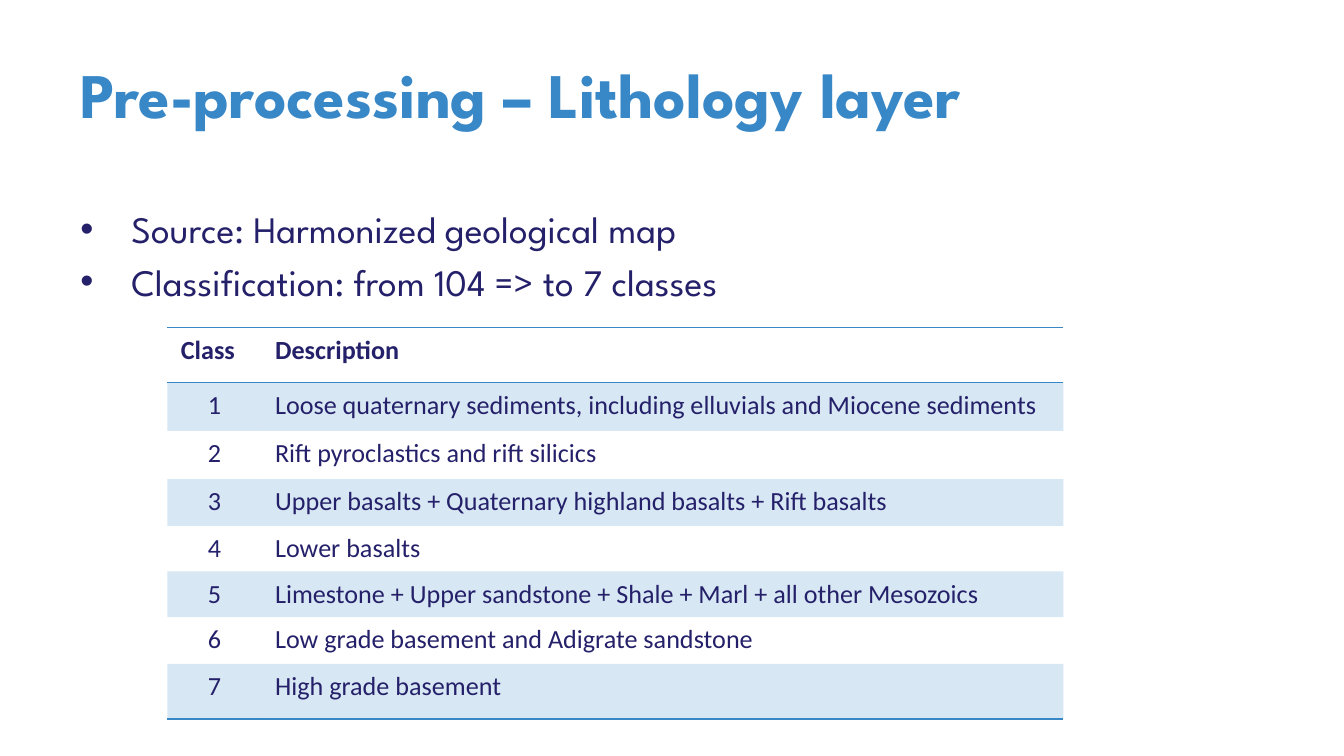
from dataclasses import dataclass

from lxml import etree
from pptx import Presentation
from pptx.dml.color import RGBColor
from pptx.enum.text import MSO_ANCHOR, PP_ALIGN
from pptx.oxml.ns import qn
from pptx.util import Inches, Pt

MIDDLE, TOP = MSO_ANCHOR.MIDDLE, MSO_ANCHOR.TOP
LEFT, CENTER = PP_ALIGN.LEFT, PP_ALIGN.CENTER
SLIDE_W = Inches(10)
SLIDE_H = SLIDE_W * 9 // 16
GRID_COLS, GRID_ROWS = 80, 45
PLAIN_TABLE = "{2D5ABB26-0587-4C30-8999-92F81FD0307C}"


@dataclass(frozen=True)
class Theme:
    """Colours, fonts and type sizes of the slide."""
    accent: str = "3887C7"
    ink: str = "242069"
    display: str = "League Spartan"
    table_font: str = "Calibri"
    title: int = 34
    body: int = 20
    cell: int = 14
    band_alpha: int = 20
    rule: int = 1


THEME = Theme()
TITLE = "Pre-processing – Lithology layer"
BULLETS = ["Source: Harmonized geological map",
           "Classification: from 104 => to 7 classes"]
HEADER = ("Class", "Description")
CLASSES = [
    "Loose quaternary sediments, including elluvials and Miocene sediments",
    "Rift pyroclastics and rift silicics",
    "Upper basalts + Quaternary highland basalts + Rift basalts",
    "Lower basalts",
    "Limestone + Upper sandstone + Shale + Marl + all other Mesozoics",
    "Low grade basement and Adigrate sandstone",
    "High grade basement",
]
COL_WIDTHS = (0.7, 5.96)
ROW_HEIGHTS = (0.41, 0.36, 0.36, 0.35, 0.34, 0.34, 0.35, 0.41)


def grid_box(col, row, cols, rows):
    """Turn grid columns and rows into a box of lengths."""
    col_w, row_h = SLIDE_W / GRID_COLS, SLIDE_H / GRID_ROWS
    return int(col * col_w), int(row * row_h), int(cols * col_w), int(rows * row_h)


def add_run(p, text, size, font, color, bold=False):
    """Append one styled run to a paragraph."""
    r = p.add_run()
    r.text = text
    r.font.size, r.font.name, r.font.bold = Pt(size), font, bold
    r.font.color.rgb = RGBColor.from_string(color)


def add_text_frame(slide, box, anchor):
    """Add a wrapping text box and return its frame."""
    tf = slide.shapes.add_textbox(*box).text_frame
    tf.word_wrap = True
    tf.vertical_anchor = anchor
    return tf


def add_title(slide, box):
    """Place the slide title."""
    tf = add_text_frame(slide, box, MIDDLE)
    add_run(tf.paragraphs[0], TITLE, THEME.title, THEME.display, THEME.accent, True)


def add_bullets(slide, box):
    """Place the bulleted list."""
    tf = add_text_frame(slide, box, TOP)
    for i, text in enumerate(BULLETS):
        p = tf.add_paragraph() if i else tf.paragraphs[0]
        pPr = p._p.get_or_add_pPr()
        pPr.set("marL", str(Inches(0.38)))
        pPr.set("indent", str(-Inches(0.38)))
        etree.SubElement(pPr, qn("a:buFont"), typeface="Arial")
        etree.SubElement(pPr, qn("a:buChar"), char="•")
        if i:
            p.space_before = Pt(0.2 * THEME.body)
        add_run(p, text, THEME.body, THEME.display, THEME.ink)


def set_fill(cell, banded):
    """Tint a banded cell and leave the others clear."""
    if not banded:
        cell.fill.background()
        return
    cell.fill.solid()
    cell.fill.fore_color.rgb = RGBColor.from_string(THEME.accent)
    color = cell._tc.tcPr.find(".//" + qn("a:srgbClr"))
    etree.SubElement(color, qn("a:alpha"), val=str(THEME.band_alpha * 1000))


def set_borders(cell, sides):
    """Rule the named sides of a cell, in schema order."""
    for i, side in enumerate(sides):
        ln = etree.Element(qn("a:ln" + side), w=str(Pt(THEME.rule)))
        fill = etree.SubElement(ln, qn("a:solidFill"))
        etree.SubElement(fill, qn("a:srgbClr"), val=THEME.accent)
        cell._tc.tcPr.insert(i, ln)


def add_class_table(slide, box):
    """Place the table of lithology classes."""
    rows = [HEADER] + [(str(n), text) for n, text in enumerate(CLASSES, 1)]
    table = slide.shapes.add_table(len(rows), len(HEADER), *box).table
    table._tbl.tblPr.find(qn("a:tableStyleId")).text = PLAIN_TABLE
    for col, width in zip(table.columns, COL_WIDTHS):
        col.width = int(box[2] * width / sum(COL_WIDTHS))
    for row, height in zip(table.rows, ROW_HEIGHTS):
        row.height = int(box[3] * height / sum(ROW_HEIGHTS))
    borders = {0: "TB", len(rows) - 1: "B"}
    for i, values in enumerate(rows):
        for j, text in enumerate(values):
            cell = table.cell(i, j)
            p = cell.text_frame.paragraphs[0]
            p.alignment = CENTER if i and j == 0 else LEFT
            add_run(p, text, THEME.cell, THEME.table_font, THEME.ink, i == 0)
            set_fill(cell, i % 2 == 1)
            set_borders(cell, borders.get(i, ""))


def main():
    """Build and save the slide."""
    prs = Presentation()
    prs.slide_width, prs.slide_height = SLIDE_W, SLIDE_H
    slide = prs.slides.add_slide(prs.slide_layouts[6])
    add_title(slide, grid_box(4, 1.8, 60.2, 7.5))
    add_bullets(slide, grid_box(4, 11.9, 59.3, 29.8))
    add_class_table(slide, grid_box(9.97, 19.5, 53.33, 23.3))
    prs.save("out.pptx")


if __name__ == "__main__":
    main()
